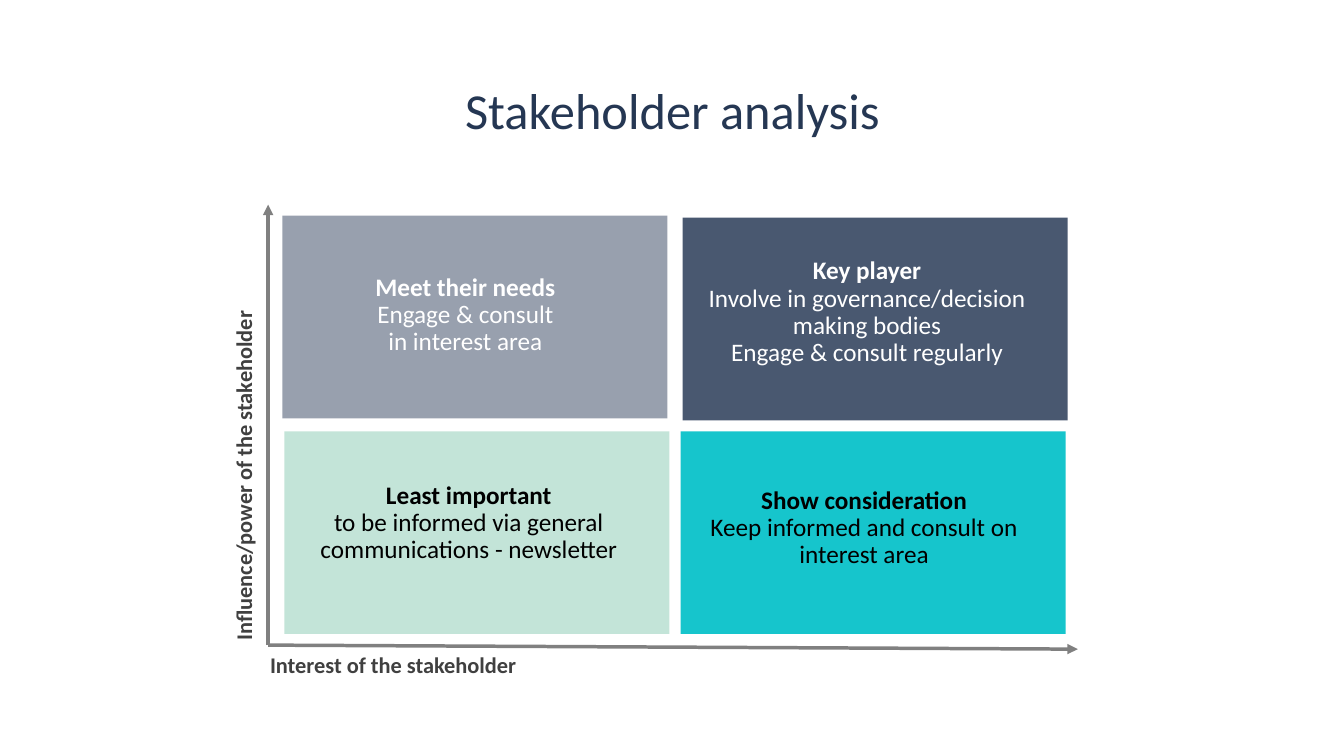
from dataclasses import dataclass

from lxml import etree
from pptx import Presentation, util as u
from pptx.dml.color import RGBColor
from pptx.enum import shapes, text
from pptx.oxml.ns import qn

FONT = "Calibri"
NAVY, WHITE, BLACK = "253753", "FFFFFF", "000000"
AXIS_GREY, LABEL_GREY = "808080", "404040"
QUADRANT_SIZE = (3.82, 2.01)
CAPTION_SIZE = (3.86, 1.16)


@dataclass(frozen=True)
class Quadrant:
    corner: tuple[float, float]
    fill: str
    opacity: int
    caption_box: tuple[float, float, float, float]
    heading: str
    advice: tuple[str, ...]
    ink: str


@dataclass(frozen=True)
class Axis:
    end: tuple[float, float]
    label: str
    label_corner: tuple[float, float]
    rotation: int


ORIGIN = (2.66, 6.4)
QUADRANTS = [
    Quadrant((2.8, 2.14), NAVY, 47, (2.97, 2.55, 3.29, 1.16),
             "Meet their needs", ("Engage & consult", "in interest area"), WHITE),
    Quadrant((6.77, 2.16), NAVY, 83, (6.67, 2.52, *CAPTION_SIZE),
             "Key player", ("Involve in governance/decision", "making bodies",
                            "Engage & consult regularly"), WHITE),
    Quadrant((2.82, 4.28), "80C6AD", 47, (2.72, 4.61, *CAPTION_SIZE), "Least important",
             ("to be informed via general communications - newsletter",), BLACK),
    Quadrant((6.75, 4.28), "16C5CC", 100, (6.64, 4.66, *CAPTION_SIZE),
             "Show consideration", ("Keep informed and consult on interest area",), BLACK),
]
AXES = [
    Axis((10.69, 6.44), "Interest of the stakeholder", (1.97, 6.03), 0),
    Axis((2.66, 2.03), "Influence/power of the stakeholder", (0.5, 4.14), 270),
]


def rgb(hex_colour: str) -> RGBColor:
    return RGBColor.from_string(hex_colour)


def inches(*lengths: float) -> list[u.Length]:
    return [u.Inches(length) for length in lengths]


def add_text(slide, box: tuple[float, ...], lines: tuple[str, ...], *, size: int,
             colour: str, bold_lines: int = 0, space_before: int = 10,
             rotation: int = 0) -> None:
    """Write centred lines in one paragraph, the first bold_lines of them bold."""
    text_box = slide.shapes.add_textbox(*inches(*box))
    text_box.rotation = rotation
    frame = text_box.text_frame
    frame.word_wrap = True
    frame.vertical_anchor = text.MSO_ANCHOR.MIDDLE
    paragraph = frame.paragraphs[0]
    paragraph.alignment = text.PP_ALIGN.CENTER
    paragraph.line_spacing = 0.9
    paragraph.space_before = u.Pt(space_before)
    for index, line in enumerate(lines):
        if index:
            paragraph.add_line_break()
        run = paragraph.add_run()
        run.text = line
        run.font.name = FONT
        run.font.size = u.Pt(size)
        run.font.bold = index < bold_lines
        run.font.color.rgb = rgb(colour)


def add_quadrant(slide, quadrant: Quadrant) -> None:
    tile = slide.shapes.add_shape(shapes.MSO_SHAPE.RECTANGLE,
                                  *inches(*quadrant.corner, *QUADRANT_SIZE))
    tile.shadow.inherit = False
    tile.line.fill.background()
    tile.fill.solid()
    tile.fill.fore_color.rgb = rgb(quadrant.fill)
    if quadrant.opacity < 100:
        colour = tile.fill._xPr.find(qn("a:solidFill"))[0]
        etree.SubElement(colour, qn("a:alpha"), val=str(quadrant.opacity * 1000))


def add_axis(slide, axis: Axis) -> None:
    arrow = slide.shapes.add_connector(shapes.MSO_CONNECTOR.STRAIGHT,
                                       *inches(*ORIGIN, *axis.end))
    arrow.line.color.rgb = rgb(AXIS_GREY)
    arrow.line.width = u.Pt(2.5)
    etree.SubElement(arrow.line._get_or_add_ln(), qn("a:tailEnd"), type="triangle")
    etree.SubElement(arrow._element.spPr, qn("a:effectLst"))


def main() -> None:
    deck = Presentation()
    deck.slide_width, deck.slide_height = inches(13.33, 7.5)
    slide = deck.slides.add_slide(deck.slide_layouts[6])

    for quadrant in QUADRANTS:
        add_quadrant(slide, quadrant)
    add_text(slide, (0.92, 0.4, 11.5, 1.45), ("Stakeholder analysis",),
             size=36, colour=NAVY, space_before=0)
    for quadrant in QUADRANTS:
        add_text(slide, quadrant.caption_box, (quadrant.heading, *quadrant.advice),
                 size=18, colour=quadrant.ink, bold_lines=1)
    for axis in AXES:
        add_axis(slide, axis)
        add_text(slide, (*axis.label_corner, *CAPTION_SIZE), (axis.label,), size=16,
                 colour=LABEL_GREY, bold_lines=1, rotation=axis.rotation)

    deck.save("out.pptx")


if __name__ == "__main__":
    main()
